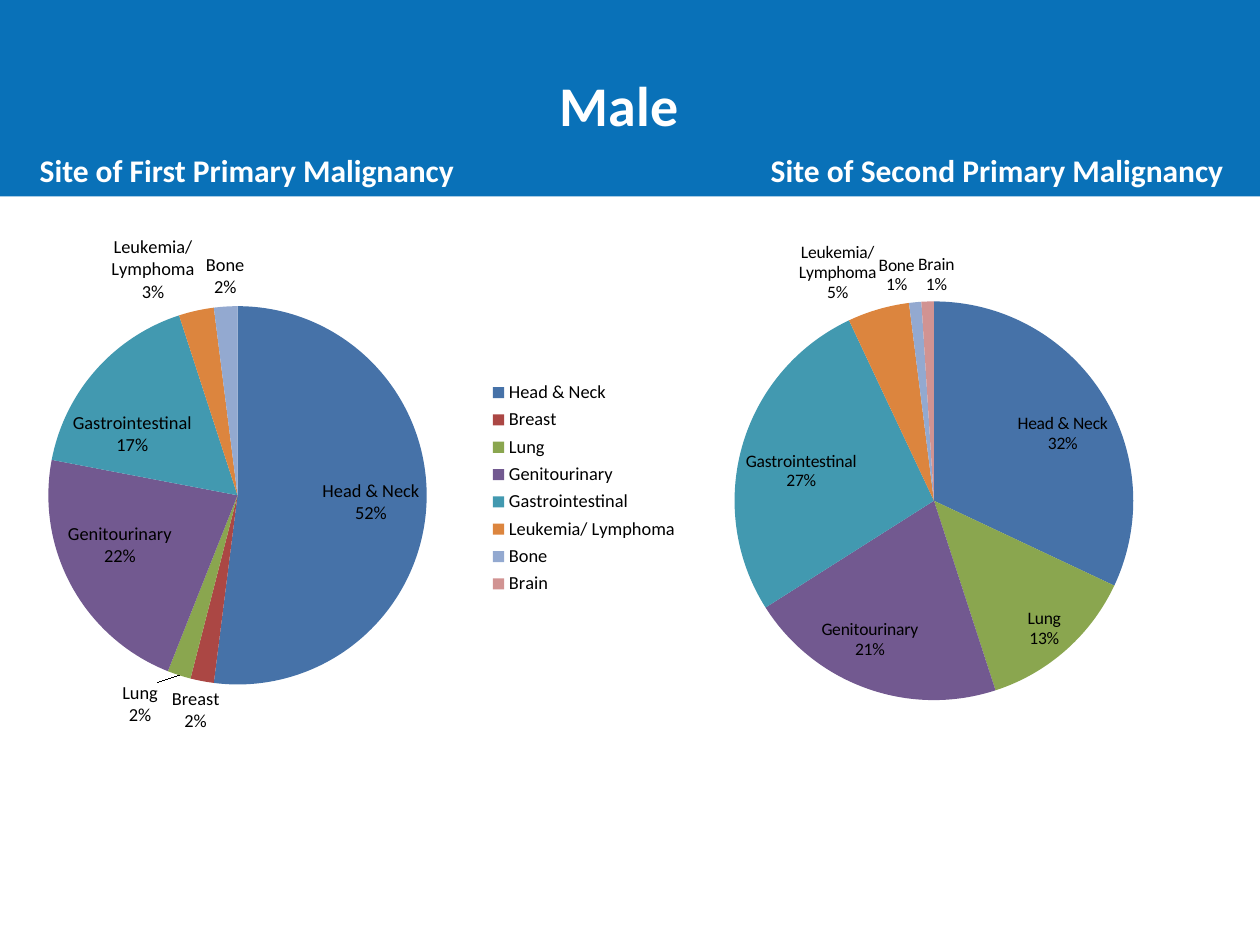
from dataclasses import dataclass

from lxml import etree
from pptx import Presentation
from pptx.chart.data import CategoryChartData
from pptx.dml.color import RGBColor
from pptx.enum.chart import XL_CHART_TYPE, XL_LABEL_POSITION, XL_LEGEND_POSITION
from pptx.enum.shapes import MSO_SHAPE
from pptx.enum.text import MSO_AUTO_SIZE, PP_ALIGN
from pptx.oxml import parse_xml
from pptx.oxml.ns import qn
from pptx.util import Inches, Pt

PIE = XL_CHART_TYPE.PIE
BEST_FIT = XL_LABEL_POSITION.BEST_FIT
LEGEND_RIGHT = XL_LEGEND_POSITION.RIGHT
RECTANGLE = MSO_SHAPE.RECTANGLE
FIT_SHAPE = MSO_AUTO_SIZE.SHAPE_TO_FIT_TEXT
CENTER = PP_ALIGN.CENTER
CHART_NS = "http://schemas.openxmlformats.org/drawingml/2006/chart"

WIDTH, HEIGHT = 10, 7.5


@dataclass(frozen=True)
class Theme:
    font: str = "Calibri"
    banner: str = "0971B8"
    heading: str = "FFFFFF"
    text: str = "000000"
    title_size: float = 32
    heading_size: float = 18
    large_label: float = 10.5
    label: float = 10
    slices: tuple = ("4672A8", "AB4744", "8AA64F", "725990",
                     "4299B0", "DC853E", "93A9D0", "D19392")


class SlideBuilder:
    """Draws elements at (left, top, width, height) shares of the slide."""

    def __init__(self, presentation, theme):
        self.presentation = presentation
        self.theme = theme
        self.slide = presentation.slides.add_slide(presentation.slide_layouts[6])

    def place(self, left, top, width, height):
        across, down = self.presentation.slide_width, self.presentation.slide_height
        return (round(left * across), round(top * down),
                round(width * across), round(height * down))

    def style(self, font, size, color, bold=False):
        font.name = self.theme.font
        font.size = Pt(size)
        font.bold = bold
        font.color.rgb = RGBColor.from_string(color)

    def band(self, area):
        band = self.slide.shapes.add_shape(RECTANGLE, *self.place(*area))
        band.shadow.inherit = False
        band.fill.solid()
        band.fill.fore_color.rgb = RGBColor.from_string(self.theme.banner)
        band.line.fill.background()

    def heading(self, words, area, size, wrap=True):
        frame = self.slide.shapes.add_textbox(*self.place(*area)).text_frame
        frame.word_wrap = wrap
        frame.auto_size = FIT_SHAPE
        paragraph = frame.paragraphs[0]
        paragraph.alignment = CENTER
        run = paragraph.add_run()
        run.text = words
        self.style(run.font, size, self.theme.heading, bold=True)

    def pie(self, sites, shares, area, plot_area, label_size, legend=False):
        data = CategoryChartData()
        data.categories = sites
        data.add_series("Series 1", shares)
        chart = self.slide.shapes.add_chart(PIE, *self.place(*area), data).chart
        chart.has_title = False
        self.style(chart.font, self.theme.label, self.theme.text)
        chart.has_legend = legend
        if legend:
            chart.legend.position = LEGEND_RIGHT
            chart.legend.include_in_layout = False
            self.style(chart.legend.font, label_size, self.theme.text)

        plot = chart.plots[0]
        plot.vary_by_categories = True
        series = plot.series[0]
        for index, color in enumerate(self.theme.slices):
            fill = series.points[index].format.fill
            fill.solid()
            fill.fore_color.rgb = RGBColor.from_string(color)
        self.slice_labels(series, shares, label_size)
        self.fix_plot(chart, plot_area)

    def slice_labels(self, series, shares, size):
        labels = series.data_labels
        labels.show_value = False
        labels.show_category_name = True
        labels.show_percentage = True
        labels.number_format = "0%"
        labels.number_format_is_linked = False
        labels.position = BEST_FIT
        self.style(labels.font, size, self.theme.text)

        # Category above percentage, and no label on an empty slice
        node = series.data_labels._element
        separator = etree.Element(qn("c:separator"))
        separator.text = "\n"
        anchor = node.find(qn("c:showBubbleSize"))
        if anchor is None:
            anchor = node.find(qn("c:showPercent"))
        anchor.addnext(separator)
        empty = [index for index, share in enumerate(shares) if share == 0]
        for position, index in enumerate(empty):
            node.insert(position, parse_xml(
                f'<c:dLbl xmlns:c="{CHART_NS}"><c:idx val="{index}"/>'
                '<c:delete val="1"/></c:dLbl>'))

    def fix_plot(self, chart, plot_area):
        node = chart._chartSpace.find(".//" + qn("c:plotArea"))
        for old in node.findall(qn("c:layout")):
            node.remove(old)
        modes = '<c:xMode val="edge"/><c:yMode val="edge"/>'
        sizes = "".join(f'<c:{key} val="{value}"/>'
                        for key, value in zip("xywh", plot_area))
        node.insert(0, parse_xml(
            f'<c:layout xmlns:c="{CHART_NS}"><c:manualLayout>'
            f'<c:layoutTarget val="inner"/>{modes}{sizes}'
            '</c:manualLayout></c:layout>'))


def main():
    presentation = Presentation()
    presentation.slide_width = Inches(WIDTH)
    presentation.slide_height = Inches(HEIGHT)
    theme = Theme()
    builder = SlideBuilder(presentation, theme)

    sites = ["Head & Neck", "Breast", "Lung", "Genitourinary",
             "Gastrointestinal", "Leukemia/ Lymphoma", "Bone", "Brain"]
    first_shares = [52, 2, 2, 22, 17, 3, 2, 0]
    second_shares = [32, 0, 13, 21, 27, 5, 1, 1]
    heading_top, heading_height = 1.15 / HEIGHT, 0.4 / HEIGHT

    # Banner and title
    builder.band((0, 0, 1, 1.56 / HEIGHT))
    builder.heading("Male", (0.434, 0.51 / HEIGHT, 0.115, 0.64 / HEIGHT),
                    theme.title_size, wrap=False)

    # Pies by site
    builder.pie(sites, first_shares, (0, 0.54 / HEIGHT, 0.549, 6.67 / HEIGHT),
                (0.07, 0.276, 0.547, 0.465), theme.large_label, legend=True)
    builder.pie(sites, second_shares, (0.583, 0, 0.5, 1),
                (0, 0.319, 0.633, 0.422), theme.label)

    # Pie headings
    builder.heading("Site of First Primary Malignancy",
                    (0.017, heading_top, 0.358, heading_height), theme.heading_size)
    builder.heading("Site of Second Primary Malignancy",
                    (0.6, heading_top, 0.383, heading_height), theme.heading_size)

    presentation.save("out.pptx")


if __name__ == "__main__":
    main()
